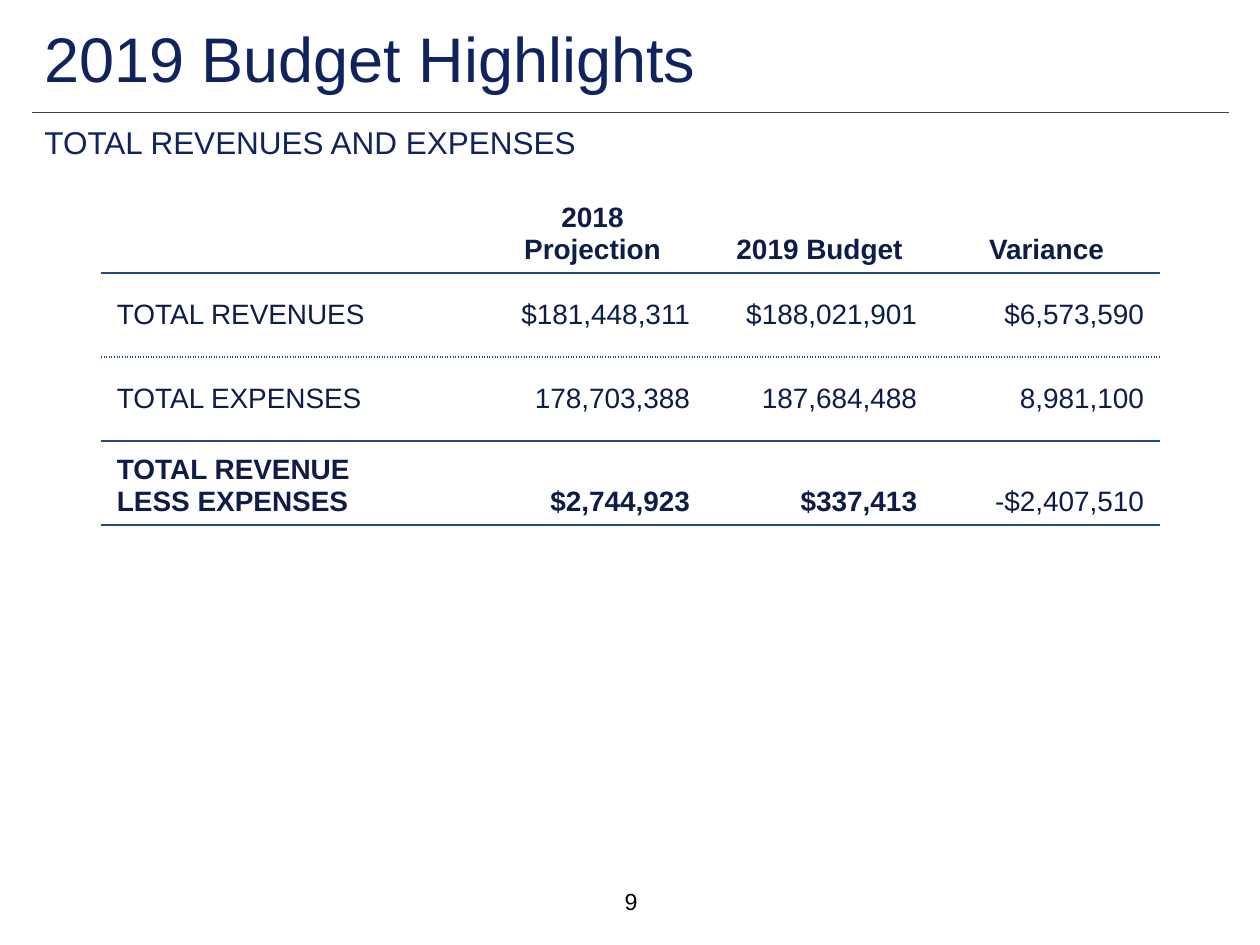
"""Build the 2019 budget highlights slide with its revenue and expense table."""
from lxml.etree import SubElement
from pptx import Presentation
from pptx.dml.color import RGBColor
from pptx.enum.shapes import MSO_CONNECTOR
from pptx.enum.text import MSO_ANCHOR, PP_ALIGN
from pptx.oxml.ns import qn
from pptx.util import Pt

COLORS = {"heading": "10235F", "body": "0E1C48", "border": "1F497D",
          "divider": "404040", "number": "000000"}
FONT = "Arial"
PX = 914400 / 126
NO_STYLE = "{2D5ABB26-0587-4C30-8999-92F81FD0307C}"

TEXTS = [
    {"text": "2019 Budget Highlights", "box": (32, 13, 683, 89), "size": 36,
     "color": "heading", "wrap": False},
    {"text": "TOTAL REVENUES AND EXPENSES", "box": (32, 117, 1193, 45), "size": 18,
     "color": "heading"},
    {"text": "9", "box": (489, 876, 284, 50), "size": 13.3, "color": "number",
     "align": PP_ALIGN.CENTER, "anchor": MSO_ANCHOR.MIDDLE},
]
ROWS = [
    {"cells": ["", "2018 Projection", "2019 Budget", "Variance"],
     "bold": 4, "anchor": MSO_ANCHOR.BOTTOM, "align": PP_ALIGN.CENTER, "below": "solid"},
    {"cells": ["TOTAL REVENUES", "$181,448,311", "$188,021,901", "$6,573,590"],
     "bold": 0, "anchor": MSO_ANCHOR.MIDDLE, "align": PP_ALIGN.RIGHT, "below": "sysDot"},
    {"cells": ["TOTAL EXPENSES", "178,703,388", "187,684,488", "8,981,100"],
     "bold": 0, "anchor": MSO_ANCHOR.MIDDLE, "align": PP_ALIGN.RIGHT, "below": "solid"},
    {"cells": ["TOTAL REVENUE\nLESS EXPENSES", "$2,744,923", "$337,413", "-$2,407,510"],
     "bold": 3, "anchor": MSO_ANCHOR.BOTTOM, "align": PP_ALIGN.RIGHT, "below": "solid"},
]
COLUMN_WIDTHS = [378, 227, 227, 227]
ROW_HEIGHT = 84
TABLE_LEFT, TABLE_TOP = 101, 189
DIVIDER = (32, 112, 1229, 112)


def px(length):
    return round(length * PX)


def add_run(paragraph, text, size, color, bold=False):
    run = paragraph.add_run()
    run.text = text
    run.font.name = FONT
    run.font.size = Pt(size)
    run.font.bold = bold
    run.font.color.rgb = RGBColor.from_string(COLORS[color])


def add_text(slide, item):
    frame = slide.shapes.add_textbox(*map(px, item["box"])).text_frame
    frame.word_wrap = item.get("wrap", True)
    frame.vertical_anchor = item.get("anchor", MSO_ANCHOR.TOP)
    paragraph = frame.paragraphs[0]
    paragraph.alignment = item.get("align", PP_ALIGN.LEFT)
    add_run(paragraph, item["text"], item["size"], item["color"])


def add_border(cell, side, dash):
    line = SubElement(cell._tc.get_or_add_tcPr(), qn(f"a:{side}"), w=str(Pt(1)))
    fill = SubElement(line, qn("a:solidFill"))
    SubElement(fill, qn("a:srgbClr"), val=COLORS["border"])
    SubElement(line, qn("a:prstDash"), val=dash)


def fill_cell(cell, text, row, column, above):
    cell.margin_left = cell.margin_right = px(16)
    cell.margin_top = cell.margin_bottom = px(8)
    cell.vertical_anchor = row["anchor"]
    if above:
        add_border(cell, "lnT", above)
    add_border(cell, "lnB", row["below"])
    cell.fill.background()
    for index, label in enumerate(text.split("\n")):
        frame = cell.text_frame
        paragraph = frame.add_paragraph() if index else frame.paragraphs[0]
        paragraph.alignment = row["align"] if column else PP_ALIGN.LEFT
        if label:
            add_run(paragraph, label, 16, "body", column < row["bold"])


def add_budget_table(slide):
    frame = slide.shapes.add_table(
        len(ROWS), len(COLUMN_WIDTHS), px(TABLE_LEFT), px(TABLE_TOP),
        px(sum(COLUMN_WIDTHS)), px(ROW_HEIGHT * len(ROWS)))
    table = frame.table
    table.first_row = table.horz_banding = False
    table._tbl.tblPr.find(qn("a:tableStyleId")).text = NO_STYLE
    for column, width in zip(table.columns, COLUMN_WIDTHS):
        column.width = px(width)
    above = None
    for index, row in enumerate(ROWS):
        table.rows[index].height = px(ROW_HEIGHT)
        for column, text in enumerate(row["cells"]):
            fill_cell(table.cell(index, column), text, row, column, above)
        above = row["below"]


def add_divider(slide):
    divider = slide.shapes.add_connector(MSO_CONNECTOR.STRAIGHT, *map(px, DIVIDER))
    divider.line.color.rgb = RGBColor.from_string(COLORS["divider"])
    divider.line.width = Pt(0.5)
    SubElement(divider._element.spPr, qn("a:effectLst"))


def main():
    deck = Presentation()
    deck.slide_width, deck.slide_height = px(1260), px(945)
    slide = deck.slides.add_slide(deck.slide_layouts[6])
    add_budget_table(slide)
    add_divider(slide)
    for item in TEXTS:
        add_text(slide, item)
    deck.save("out.pptx")


if __name__ == "__main__":
    main()
